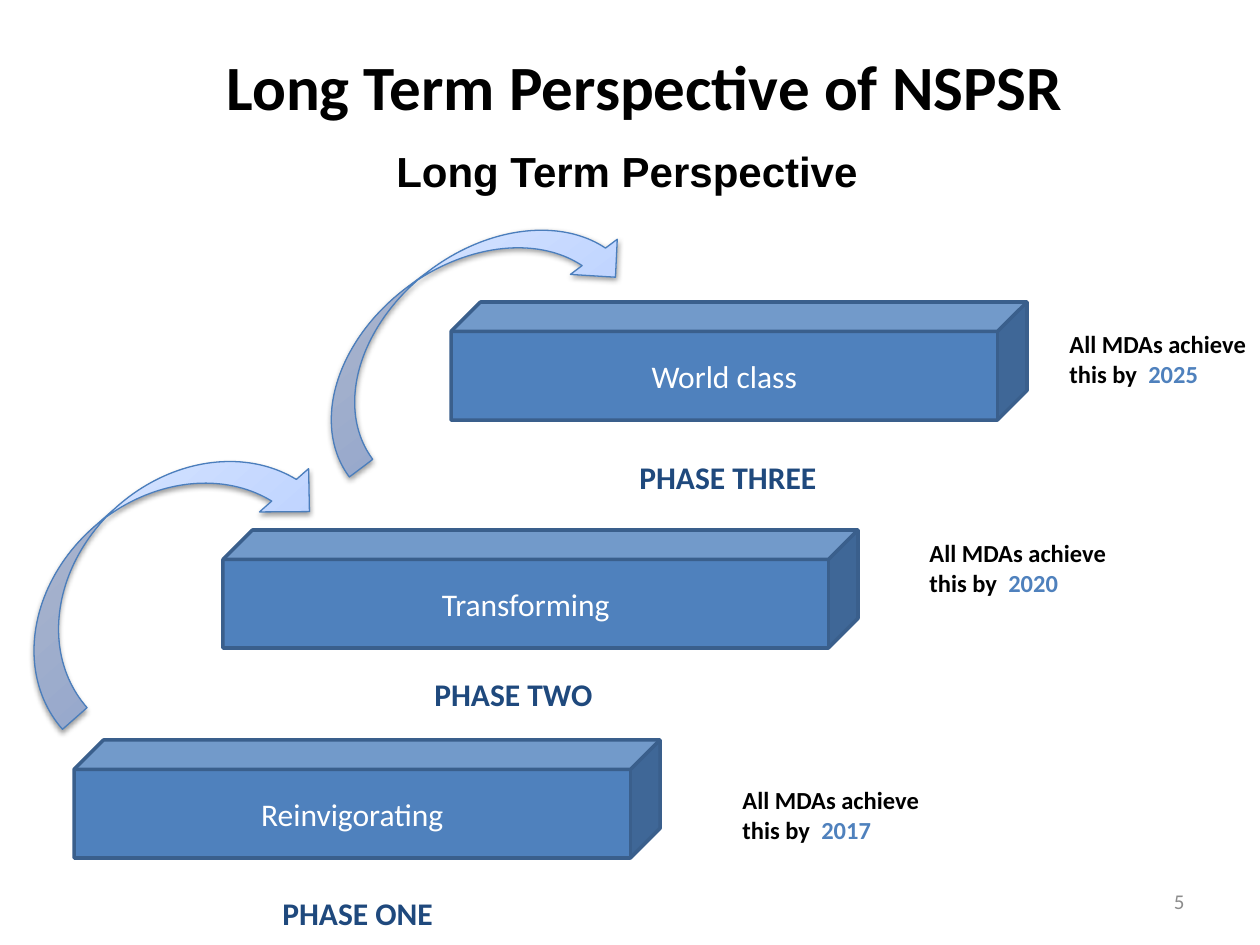
from lxml import etree
from pptx import Presentation
from pptx.dml.color import RGBColor
from pptx.enum.shapes import MSO_SHAPE
from pptx.enum.text import MSO_ANCHOR, PP_ALIGN
from pptx.oxml import parse_xml
from pptx.oxml.ns import nsdecls, qn
from pptx.util import Emu, Pt

CUBE, ARROW = MSO_SHAPE.CUBE, MSO_SHAPE.CURVED_DOWN_ARROW
TOP, MIDDLE = MSO_ANCHOR.TOP, MSO_ANCHOR.MIDDLE
LEFT, CENTER, RIGHT = PP_ALIGN.LEFT, PP_ALIGN.CENTER, PP_ALIGN.RIGHT

BLACK = RGBColor(0x00, 0x00, 0x00)
WHITE = RGBColor(0xFF, 0xFF, 0xFF)
BLUE = RGBColor(0x4F, 0x81, 0xBD)
CUBE_EDGE = RGBColor(0x3A, 0x5F, 0x8C)
ARROW_EDGE = RGBColor(0x4B, 0x7E, 0xBC)
NAVY = RGBColor(0x1F, 0x49, 0x7D)
GRAY = RGBColor(0x8C, 0x8C, 0x8C)
ARROW_STOPS = (
    (0, RGBColor(0xA4, 0xC4, 0xFF)),
    (35, RGBColor(0xBF, 0xD4, 0xFF)),
    (100, RGBColor(0xE6, 0xEE, 0xFF)),
)

CUBE_H = 118
NOTE_W, NOTE_H = 218, 72
LABEL_H = 50
PHASES = (
    ("Reinvigorating", (74, 740, 586), "2017", (730, 779), "PHASE ONE", (270, 888, 183)),
    ("Transforming", (223, 530, 635), "2020", (917, 532), "PHASE TWO", (422, 669, 208)),
    ("World class", (451, 302, 576), "2025", (1057, 323), "PHASE THREE", (627, 452, 231)),
)
ARROWS = (
    ((-26, 495, 362, 131), 318.6),
    ((278, 263, 362, 117), 323.1),
)


def px(n):
    return Emu(round(n * 914400 / 126))


def add_run(p, text, size=18, color=BLACK, bold=False, font="Calibri"):
    r = p.add_run()
    r.text = text
    r.font.size = Pt(size)
    r.font.name = font
    r.font.bold = bold
    r.font.color.rgb = color


def add_text(slide, box, text, align=LEFT, anchor=TOP, **fmt):
    tf = slide.shapes.add_textbox(*map(px, box)).text_frame
    tf.word_wrap = True
    tf.vertical_anchor = anchor
    p = tf.paragraphs[0]
    p.alignment = align
    add_run(p, text, **fmt)
    return tf


def add_shape(slide, kind, box, edge, width):
    sp = slide.shapes.add_shape(kind, *map(px, box))
    sp.shadow.inherit = False
    sp.line.color.rgb = edge
    sp.line.width = Pt(width)
    return sp


def add_cube(slide, box, text):
    sp = add_shape(slide, CUBE, box, CUBE_EDGE, 2)
    sp.fill.solid()
    sp.fill.fore_color.rgb = BLUE
    tf = sp.text_frame
    tf.vertical_anchor = MIDDLE
    p = tf.paragraphs[0]
    p.alignment = CENTER
    add_run(p, text, color=WHITE)


def add_arrow(slide, box, rotation):
    sp = add_shape(slide, ARROW, box, ARROW_EDGE, 0.75)
    sp.rotation = rotation
    sp.fill.gradient()
    sp.fill.gradient_angle = 90
    props = sp._element.spPr
    stops = props.find(".//" + qn("a:gsLst"))
    for gs in list(stops):
        stops.remove(gs)
    for pos, color in ARROW_STOPS:
        gs = etree.SubElement(stops, qn("a:gs"), pos=str(pos * 1000))
        etree.SubElement(gs, qn("a:srgbClr"), val=str(color))
    props.find(qn("a:effectLst")).append(parse_xml(
        f'<a:outerShdw {nsdecls("a")} blurRad="40000" dist="20000" dir="5400000"'
        ' rotWithShape="0"><a:srgbClr val="000000"><a:alpha val="38000"/>'
        '</a:srgbClr></a:outerShdw>'))


def add_phase(slide, name, cube, year, note, label, label_box):
    add_cube(slide, (*cube, CUBE_H), name)
    tf = add_text(slide, (*note, NOTE_W, NOTE_H), "All MDAs achieve this by  ",
                  size=14, bold=True)
    add_run(tf.paragraphs[0], year, size=14, color=BLUE, bold=True)
    add_text(slide, (*label_box, LABEL_H), label, color=NAVY, bold=True)


def main():
    prs = Presentation()
    prs.slide_width, prs.slide_height = px(1260), px(945)
    slide = prs.slides.add_slide(prs.slide_layouts[6])
    subtitle = add_text(slide, (39, 116, 1176, 158), "Long Term Perspective",
                        align=CENTER, anchor=MIDDLE, size=24, bold=True, font="Arial")
    subtitle.margin_bottom = px(54)
    for phase in PHASES:
        add_phase(slide, *phase)
    for box, rotation in ARROWS:
        add_arrow(slide, box, rotation)
    add_text(slide, (54, 6, 1181, 158), "Long Term Perspective of NSPSR",
             align=CENTER, anchor=MIDDLE, size=36, bold=True)
    add_text(slide, (903, 876, 294, 50), "5",
             align=RIGHT, anchor=MIDDLE, size=12, color=GRAY)
    prs.save("out.pptx")


if __name__ == "__main__":
    main()
